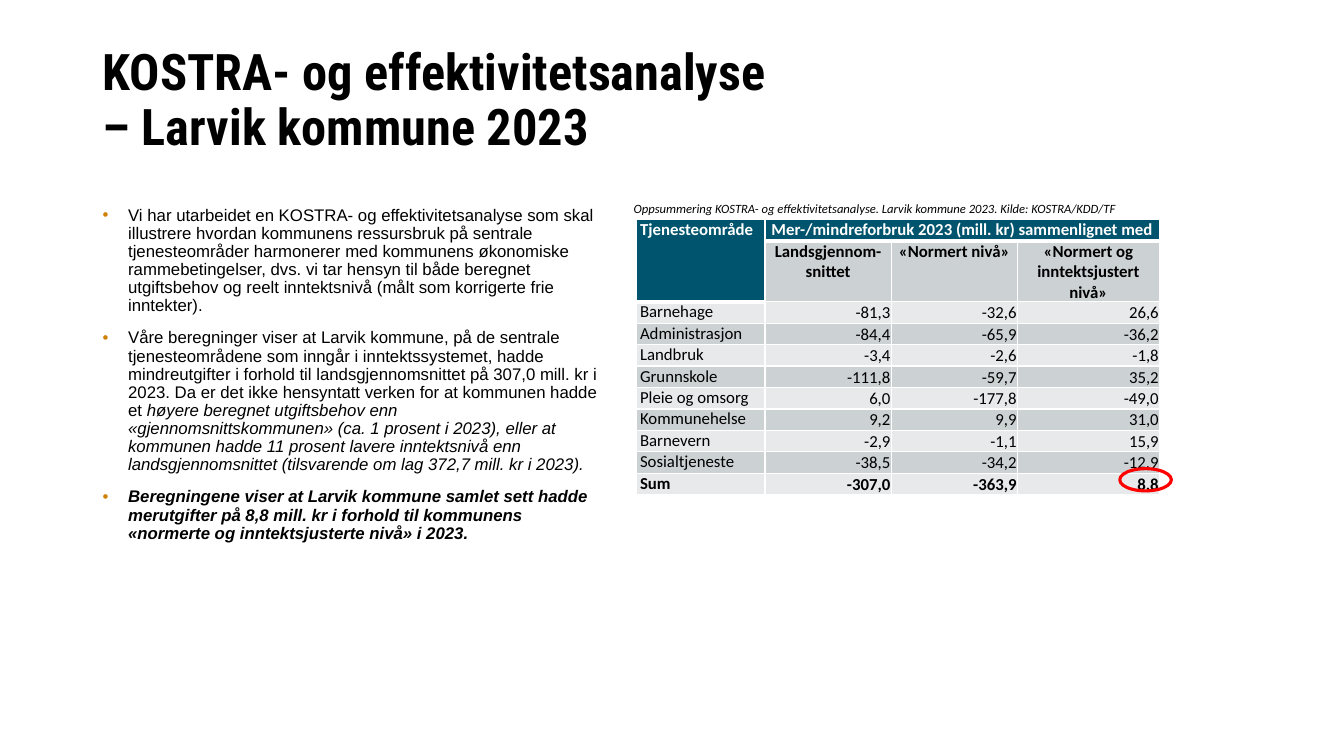
from lxml.etree import SubElement
from pptx import Presentation
from pptx.dml.color import RGBColor
from pptx.enum.shapes import MSO_SHAPE as Shape
from pptx.enum.text import MSO_ANCHOR as Anchor, PP_ALIGN as Align
from pptx.oxml import parse_xml
from pptx.oxml.ns import nsdecls, qn
from pptx.util import Cm, Pt

TEAL, GREY, LIGHT = "00546D", "CCD1D4", "E7E9EB"
WHITE, BLACK = "FFFFFF", "000000"


def style(run, size, name, color=BLACK, bold=False, italic=False):
    font = run.font
    font.size, font.name = Pt(size), name
    font.bold, font.italic = bold, italic
    font.color.rgb = RGBColor.from_string(color)


def border(cell, bottom):
    """Draw white cell borders, with the bottom one of the given width in points."""
    props = cell._tc.get_or_add_tcPr()
    for i, side in enumerate("LRTB"):
        width = Pt(bottom if side == "B" else 1)
        props.insert(i, parse_xml(
            f'<a:ln{side} w="{width}" {nsdecls("a")}><a:solidFill>'
            f'<a:srgbClr val="{WHITE}"/></a:solidFill></a:ln{side}>'))


prs = Presentation()
prs.slide_width, prs.slide_height = Cm(33.87), Cm(19.05)
slide = prs.slides.add_slide(prs.slide_layouts[6])
shapes = slide.shapes

# Title
frame = shapes.add_textbox(Cm(2.34), Cm(0.38), Cm(29.21), Cm(3.68)).text_frame
frame.word_wrap = True
frame.vertical_anchor = Anchor.BOTTOM
para = frame.paragraphs[0]
para.text = "KOSTRA- og effektivitetsanalyse \v– Larvik kommune 2023"
para.line_spacing = 0.9
for run in para.runs:
    style(run, 36, "Roboto Condensed", bold=True)

# Bullets: each is a list of (text, bold, italic)
bullets = [
    [("Vi har utarbeidet en KOSTRA- og effektivitetsanalyse som skal illustrere "
      "hvordan kommunens ressursbruk på sentrale tjenesteområder harmonerer med "
      "kommunens økonomiske rammebetingelser, dvs. vi tar hensyn til både beregnet "
      "utgiftsbehov og reelt inntektsnivå (målt som korrigerte frie inntekter).",
      False, False)],
    [("Våre beregninger viser at Larvik kommune, på de sentrale tjenesteområdene "
      "som inngår i inntektssystemet, hadde mindreutgifter i forhold til "
      "landsgjennomsnittet på 307,0 mill. kr i 2023. Da er det ikke hensyntatt "
      "verken for at kommunen hadde et ", False, False),
     ("høyere beregnet utgiftsbehov enn «gjennomsnittskommunen» (ca. 1 prosent i "
      "2023), eller at kommunen hadde 11 prosent lavere inntektsnivå enn "
      "landsgjennomsnittet (tilsvarende om lag 372,7 mill. kr i 2023).",
      False, True)],
    [("Beregningene viser at Larvik kommune samlet sett hadde merutgifter på 8,8 "
      "mill. kr i forhold til kommunens «normerte og inntektsjusterte nivå» i 2023.",
      True, True)],
]
frame = shapes.add_textbox(Cm(2.34), Cm(5.08), Cm(13.16), Cm(12.57)).text_frame
frame.word_wrap = True
for i, parts in enumerate(bullets):
    para = frame.add_paragraph() if i else frame.paragraphs[0]
    para.line_spacing, para.space_before = 0.9, Pt(10)
    props = para._p.get_or_add_pPr()
    props.set("marL", str(Cm(0.64)))
    props.set("indent", str(-Cm(0.64)))
    color = SubElement(props, qn("a:buClr"))
    SubElement(color, qn("a:srgbClr"), val="CF8000")
    SubElement(props, qn("a:buFont"), typeface="Arial")
    SubElement(props, qn("a:buChar"), char="•")
    for text, bold, italic in parts:
        run = para.add_run()
        run.text = text
        style(run, 12, "Arial", bold=bold, italic=italic)

# Table
rows = [
    ["Tjenesteområde", "Mer-/mindreforbruk 2023 (mill. kr) sammenlignet med", "", ""],
    ["", "Landsgjennom-snittet", "«Normert nivå»", "«Normert og inntektsjustert nivå»"],
    ["Barnehage", "-81,3", "-32,6", "26,6"],
    ["Administrasjon", "-84,4", "-65,9", "-36,2"],
    ["Landbruk", "-3,4", "-2,6", "-1,8"],
    ["Grunnskole", "-111,8", "-59,7", "35,2"],
    ["Pleie og omsorg", "6,0", "-177,8", "-49,0"],
    ["Kommunehelse", "9,2", "9,9", "31,0"],
    ["Barnevern", "-2,9", "-1,1", "15,9"],
    ["Sosialtjeneste", "-38,5", "-34,2", "-12,9"],
    ["Sum", "-307,0", "-363,9", "8,8"],
]
last = len(rows) - 1
table = shapes.add_table(len(rows), 4, Cm(16.03), Cm(5.54), Cm(13.16), Cm(6.9)).table
for col, width in zip(table.columns, (3.25, 3.18, 3.18, 3.58)):
    col.width = Cm(width)
for r, row in enumerate(rows):
    table.rows[r].height = Cm(1.5 if r == 1 else 0.54)
    for c, text in enumerate(row):
        cell = table.cell(r, c)
        head = r < 2
        dark = r == 0 or (r == 1 and c == 0)
        number = not head and c > 0
        cell.fill.solid()
        cell.fill.fore_color.rgb = RGBColor.from_string(
            TEAL if dark else GREY if r % 2 else LIGHT)
        border(cell, 3 if dark else 1)
        cell.margin_left = cell.margin_right = Cm(0.02 if number else 0.1)
        cell.margin_top = Cm(0.02 if number else 0)
        cell.margin_bottom = 0
        para = cell.text_frame.paragraphs[0]
        para.text = text
        if number:
            cell.vertical_anchor = Anchor.BOTTOM
            para.alignment = Align.RIGHT
        else:
            para.alignment = Align.CENTER if c else Align.LEFT
            para.space_after = Pt(12)
        for run in para.runs:
            style(run, 12, "Calibri", WHITE if dark else BLACK, head or r == last)
table.cell(0, 0).merge(table.cell(1, 0))
table.cell(0, 1).merge(table.cell(0, 3))

# Ring around the total
ring = shapes.add_shape(Shape.OVAL, Cm(28.22), Cm(11.81), Cm(1.3), Cm(0.56))
ring.shadow.inherit = False
ring.fill.background()
ring.line.color.rgb = RGBColor.from_string("FF0000")
ring.line.width = Pt(2.25)

# Table caption
frame = shapes.add_textbox(Cm(15.72), Cm(4.88), Cm(14.2), Cm(0.66)).text_frame
frame.word_wrap = True
para = frame.paragraphs[0]
para.text = ("Oppsummering KOSTRA- og effektivitetsanalyse. Larvik kommune 2023. "
             "Kilde: KOSTRA/KDD/TF")
para.line_spacing = 1.15
style(para.runs[0], 9, "Calibri", italic=True)

prs.save("out.pptx")
